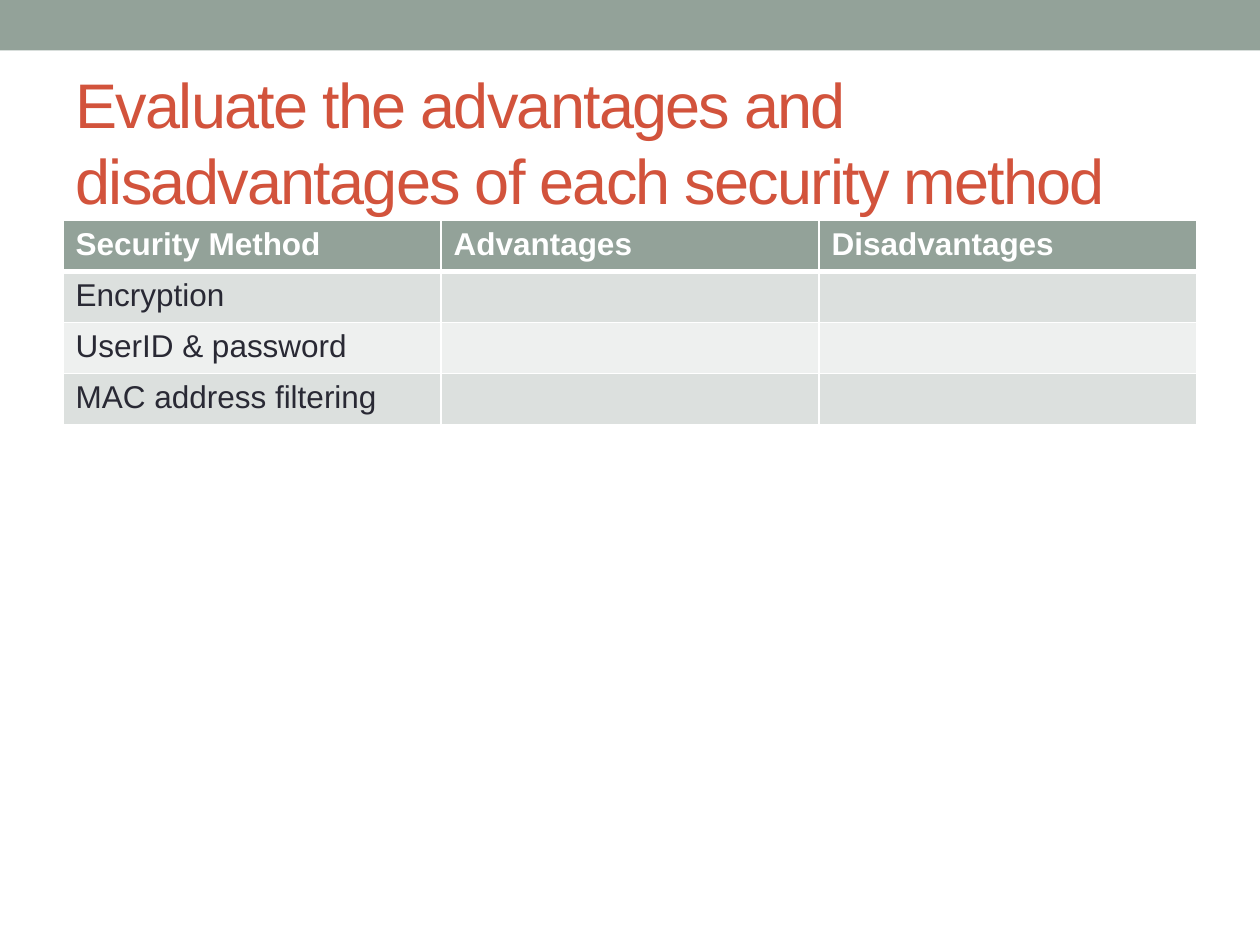
from lxml import etree
from pptx import Presentation
from pptx.dml.color import RGBColor
from pptx.enum.shapes import MSO_SHAPE
from pptx.enum.text import MSO_ANCHOR, PP_ALIGN
from pptx.oxml.ns import qn
from pptx.util import Inches, Pt

RECTANGLE = MSO_SHAPE.RECTANGLE
MIDDLE = MSO_ANCHOR.MIDDLE
LEFT = PP_ALIGN.LEFT

FONT = "Arial"
COLORS = {
    "sage": "93A299",
    "title": "D2533C",
    "text": "292934",
    "white": "FFFFFF",
    "band_dark": "DCE0DE",
    "band_light": "EEF0EF",
}
ROWS = [
    ("Security Method", "Advantages", "Disadvantages"),
    ("Encryption", "", ""),
    ("UserID & password", "", ""),
    ("MAC address filtering", "", ""),
]


def color(name):
    return RGBColor.from_string(COLORS[name])


def format_text(text_frame, size, color_name, bold=False):
    for paragraph in text_frame.paragraphs:
        paragraph.alignment = LEFT
        paragraph.font.size = Pt(size)
        for run in paragraph.runs:
            run.font.name = FONT
            run.font.size = Pt(size)
            run.font.bold = bold
            run.font.color.rgb = color(color_name)


def add_top_bar(slide):
    bar = slide.shapes.add_shape(RECTANGLE, 0, 0, Inches(10), Inches(0.4))
    bar.shadow.inherit = False
    bar.fill.solid()
    bar.fill.fore_color.rgb = color("sage")
    bar.line.fill.background()


def set_title(slide, text):
    title = slide.shapes.title
    title.left, title.top = Inches(0.5), Inches(0.58)
    title.width, title.height = Inches(9), Inches(1.08)
    title.text_frame.text = text
    title.text_frame.word_wrap = True
    title.text_frame.vertical_anchor = MIDDLE
    format_text(title.text_frame, 36, "title")
    for run in title.text_frame.paragraphs[0].runs:
        run.font._element.set("spc", "-100")


def set_borders(cell, top, bottom):
    """Draw white cell borders; top and bottom widths are in points."""
    properties = cell._tc.get_or_add_tcPr()
    for side, width in (("L", 1), ("R", 1), ("T", top), ("B", bottom)):
        line = etree.SubElement(properties, qn(f"a:ln{side}"), w=str(Pt(width)))
        fill = etree.SubElement(line, qn("a:solidFill"))
        etree.SubElement(fill, qn("a:srgbClr"), val=COLORS["white"])


def row_fill(row_index):
    if row_index == 0:
        return "sage"
    return "band_dark" if row_index % 2 else "band_light"


def add_methods_table(slide):
    table = slide.shapes.add_table(
        len(ROWS), len(ROWS[0]), Inches(0.5), Inches(1.75), Inches(9), Inches(1.62)
    ).table
    for row_index, texts in enumerate(ROWS):
        is_header = row_index == 0
        for column_index, text in enumerate(texts):
            cell = table.cell(row_index, column_index)
            cell.text_frame.text = text
            format_text(cell.text_frame, 18, "white" if is_header else "text", is_header)
            set_borders(cell, top=3 if row_index == 1 else 1, bottom=3 if is_header else 1)
            cell.fill.solid()
            cell.fill.fore_color.rgb = color(row_fill(row_index))


def main():
    presentation = Presentation()
    presentation.slide_width = Inches(10)
    presentation.slide_height = Inches(7.5)
    slide = presentation.slides.add_slide(presentation.slide_layouts.get_by_name("Title Only"))
    add_top_bar(slide)
    set_title(slide, "Evaluate the advantages and disadvantages of each security method")
    add_methods_table(slide)
    presentation.save("out.pptx")


if __name__ == "__main__":
    main()
